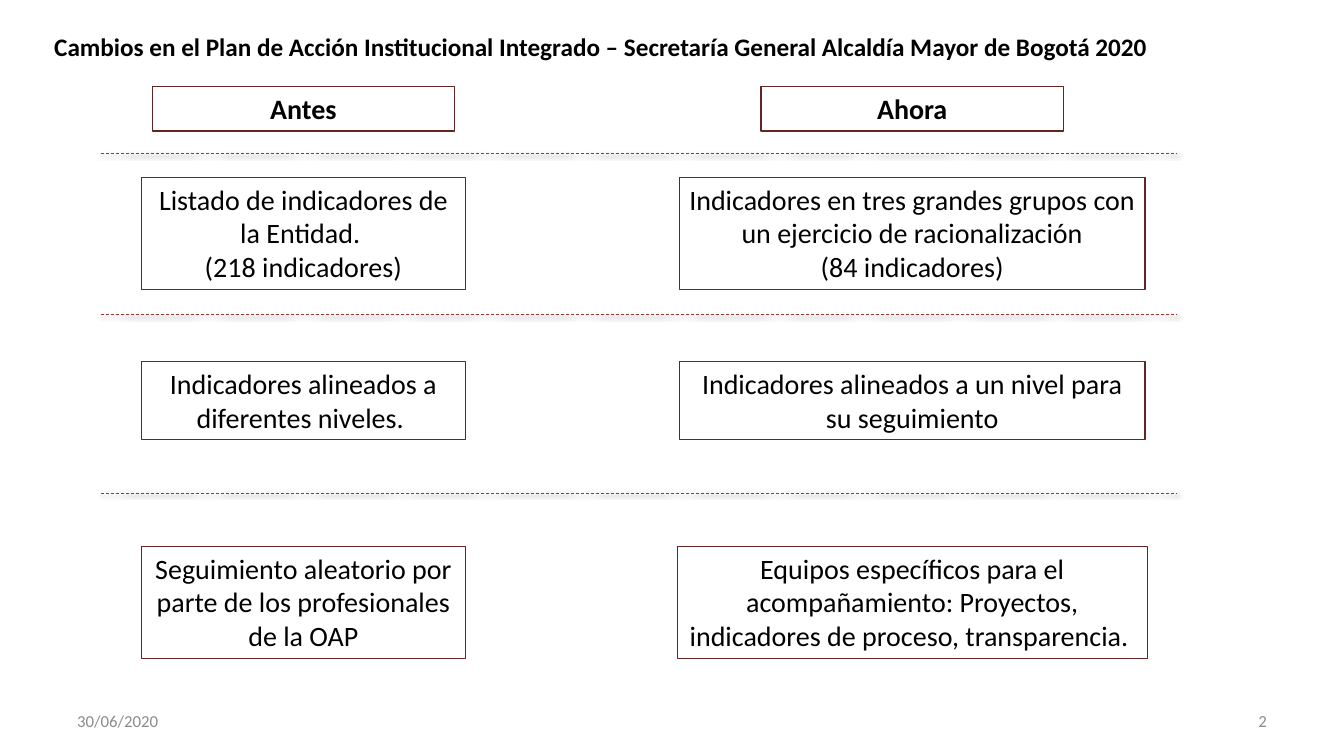
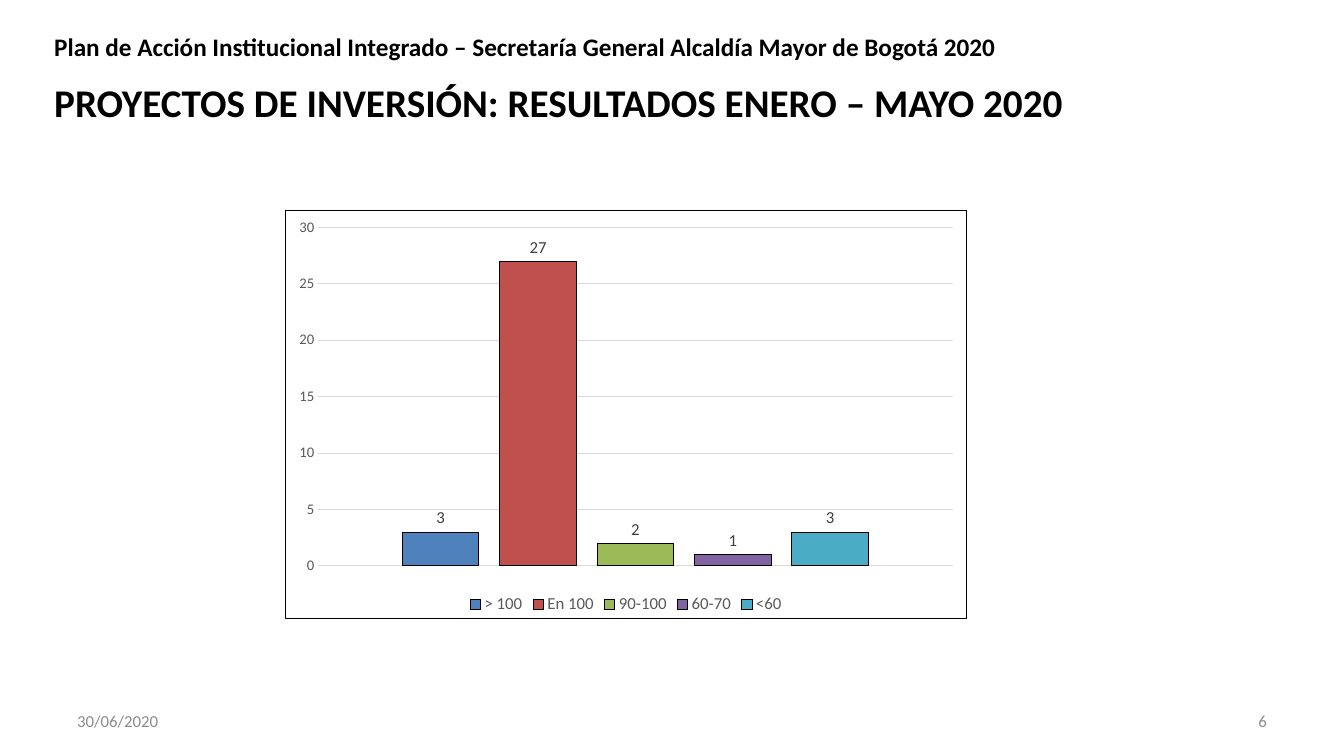
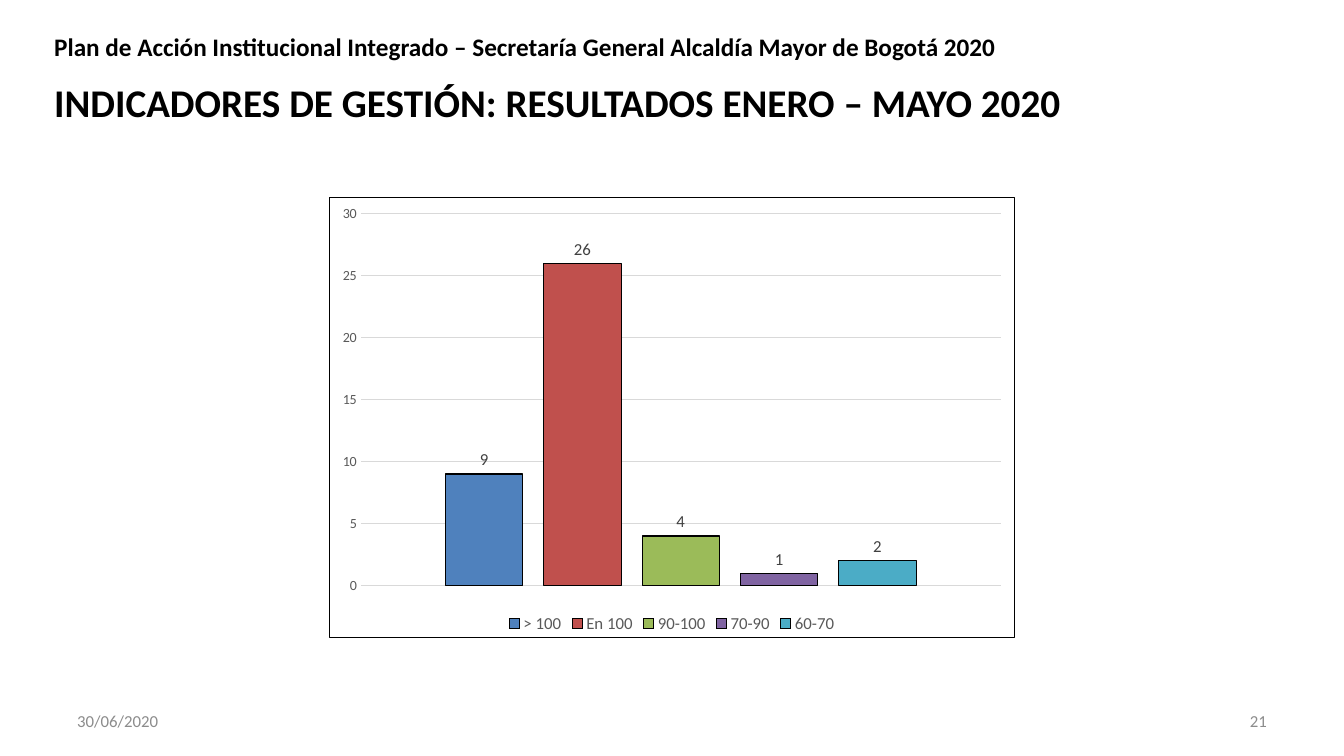
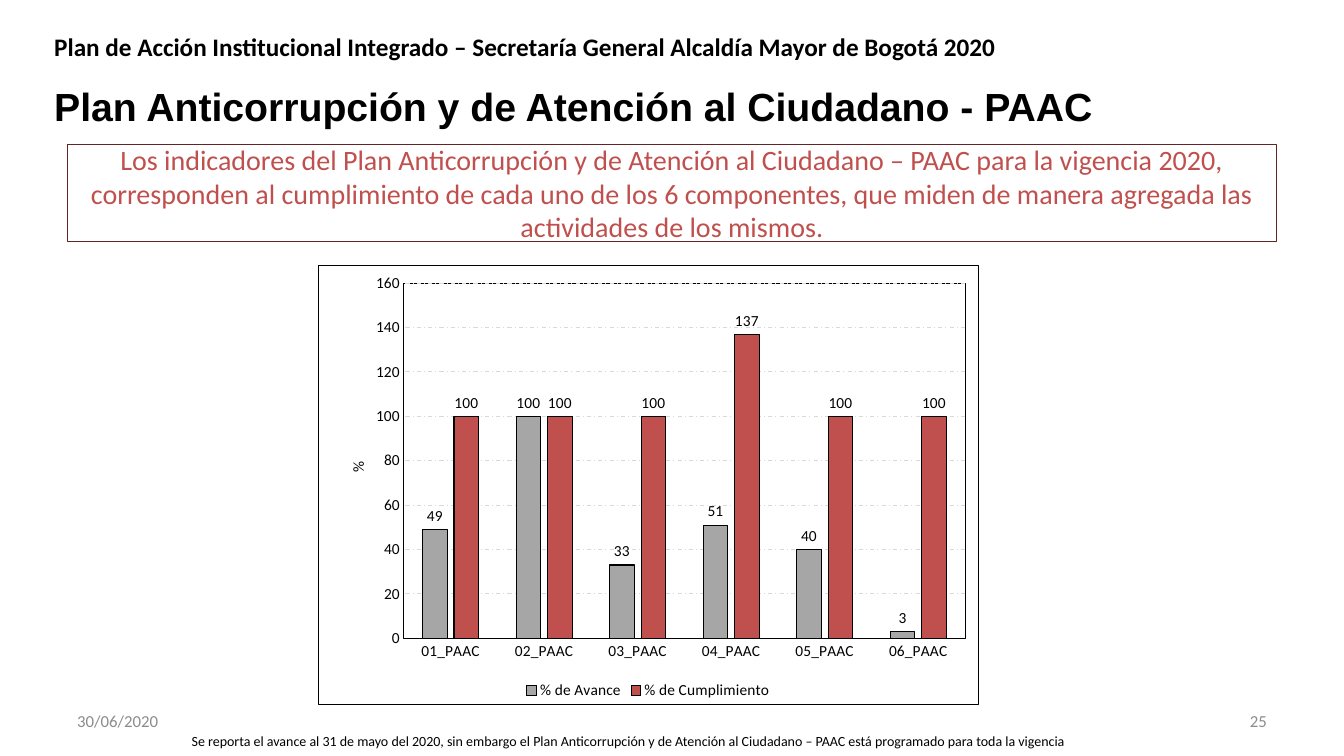
from dataclasses import dataclass

from lxml import etree
from pptx import Presentation
from pptx.chart.data import CategoryChartData
from pptx.dml.color import RGBColor
from pptx.enum.chart import XL_CHART_TYPE, XL_LABEL_POSITION, XL_LEGEND_POSITION, XL_TICK_MARK
from pptx.enum.dml import MSO_LINE
from pptx.enum.shapes import MSO_CONNECTOR, MSO_SHAPE
from pptx.enum.text import MSO_ANCHOR, PP_ALIGN
from pptx.oxml import parse_xml
from pptx.oxml.ns import nsdecls, qn
from pptx.util import Inches, Pt

COLUMNS = XL_CHART_TYPE.COLUMN_CLUSTERED
OUTSIDE_END = XL_LABEL_POSITION.OUTSIDE_END
BOTTOM = XL_LEGEND_POSITION.BOTTOM
NO_TICK = XL_TICK_MARK.NONE
DASH, DASH_DOT = MSO_LINE.DASH, MSO_LINE.DASH_DOT
STRAIGHT, RECTANGLE = MSO_CONNECTOR.STRAIGHT, MSO_SHAPE.RECTANGLE
TOP, MIDDLE = MSO_ANCHOR.TOP, MSO_ANCHOR.MIDDLE
LEFT, CENTER, RIGHT = PP_ALIGN.LEFT, PP_ALIGN.CENTER, PP_ALIGN.RIGHT

FONT, TITLE_FONT = "Calibri", "Arial"
BLACK, GREY, DARK_GREY, LABEL_GREY = "000000", "8C8C8C", "595959", "404040"
GRID_GREY, BAR_GREY = "D9D9D9", "A6A6A6"
RED, FRAME_RED, DIVIDER_RED = "C0504D", "632523", "953735"
RANGE_COLORS = ["4F81BD", RED, "9BBB59", "8064A2", "4BACC6"]
DATE = "30/06/2020"
PLAN = "Plan de Acción Institucional Integrado – Secretaría General Alcaldía Mayor de Bogotá 2020"


@dataclass
class Box:
    left: int
    top: int
    width: int
    height: int

    def share(self, x, y, w, h):
        """Inner box, given in percent of this one."""
        return Box(int(self.left + self.width * x / 100), int(self.top + self.height * y / 100),
                   int(self.width * w / 100), int(self.height * h / 100))

    def bounds(self):
        return self.left, self.top, self.width, self.height


PAGE = Box(0, 0, Inches(13.33), Inches(7.5))


# Shared styles
def rgb(value):
    return RGBColor.from_string(value)


def style_font(font, size, color=BLACK, bold=False, name=FONT):
    font.name, font.size, font.bold = name, Pt(size), bold
    font.color.rgb = rgb(color)


def style_line(line, color, width=0.75, dash=None):
    line.color.rgb = rgb(color)
    line.width = Pt(width)
    if dash:
        line.dash_style = dash


def write(shape, text, size, color=BLACK, bold=False, align=LEFT, anchor=TOP, name=FONT):
    frame = shape.text_frame
    frame.word_wrap = True
    frame.vertical_anchor = anchor
    frame.text = text
    for paragraph in frame.paragraphs:
        paragraph.alignment = align
        for run in paragraph.runs:
            style_font(run.font, size, color, bold, name)


def add_text(slide, box, text, size, **style):
    label = slide.shapes.add_textbox(*box.bounds())
    write(label, text, size, **style)
    return label


def add_frame(slide, box, text, **style):
    frame = slide.shapes.add_shape(RECTANGLE, *box.bounds())
    frame.shadow.inherit = False
    frame.fill.background()
    style_line(frame.line, FRAME_RED)
    write(frame, text, 20, align=CENTER, **style)


def new_slide(deck, number, heading):
    slide = deck.slides.add_slide(deck.slide_layouts[6])
    add_text(slide, PAGE.share(3.3, 3.45, 86.55, 5.33), heading, 18, bold=True)
    for x, text, align in ((5, DATE, LEFT), (71.67, str(number), RIGHT)):
        add_text(slide, PAGE.share(x, 92.67, 23.33, 5.33), text, 12,
                 color=GREY, align=align, anchor=MIDDLE)
    return slide


def add_title(slide, text, name=FONT):
    title = add_text(slide, PAGE.share(3.3, 9.75, 90, 7.6), text, 28, bold=True, name=name)
    return title.text_frame.paragraphs[0]


# Comparison
def add_divider(slide, y):
    row = PAGE.share(7.5, y, 80.1, 0)
    divider = slide.shapes.add_connector(STRAIGHT, row.left, row.top,
                                         row.left + row.width, row.top)
    style_line(divider.line, DIVIDER_RED, 0.5, DASH)
    divider.element.spPr.append(parse_xml(
        f'<a:effectLst {nsdecls("a")}><a:outerShdw blurRad="40000" dist="20000" dir="5400000" '
        'rotWithShape="0"><a:srgbClr val="000000"><a:alpha val="38000"/></a:srgbClr>'
        '</a:outerShdw></a:effectLst>'))


def add_column(slide, box, heading, heading_width, statements):
    """Heading over evenly stepped statements, all centred in the box."""
    def centred(y, w, h):
        return box.share((100 - w) / 2, y, w, h)

    add_frame(slide, centred(0, heading_width, 7.76), heading, bold=True)
    for i, (text, width, height) in enumerate(statements):
        add_frame(slide, centred(15.87 + 32.28 * i, width, height), text)


def comparison_slide(deck):
    slide = new_slide(deck, 2, "Cambios en el Plan de Acción Institucional Integrado – "
                               "Secretaría General Alcaldía Mayor de Bogotá 2020")
    two_lines, three_lines = 13.58, 19.58
    add_column(slide, PAGE.share(10.5, 11.47, 24.15, 75.6), "Antes", 93.17, [
        ("Listado de indicadores de la Entidad. \n(218 indicadores)", 100, three_lines),
        ("Indicadores alineados a diferentes niveles. ", 100, two_lines),
        ("Seguimiento aleatorio por parte de los profesionales de la OAP", 100, three_lines)])
    add_column(slide, PAGE.share(50.4, 11.47, 34.95, 75.6), "Ahora", 64.38, [
        ("Indicadores en tres grandes grupos con un ejercicio de racionalización\n"
         "(84 indicadores)", 99.14, three_lines),
        ("Indicadores alineados a un nivel para su seguimiento", 99.14, two_lines),
        ("Equipos específicos para el acompañamiento: Proyectos, "
         "indicadores de proceso, transparencia. ", 100, three_lines)])
    for y in (20.27, 41.6, 65.2):
        add_divider(slide, y)


# Charts
def outline_xml():
    return parse_xml(
        f'<c:spPr {nsdecls("c", "a")}><a:noFill/><a:ln w="9525"><a:solidFill>'
        f'<a:srgbClr val="{BLACK}"/></a:solidFill></a:ln></c:spPr>')


def set_layout(parent, index, target=None, **places):
    """Fixes the place of a chart part, in shares of the chart."""
    for old in parent.findall(qn("c:layout")):
        parent.remove(old)
    layout = etree.Element(qn("c:layout"))
    manual = etree.SubElement(layout, qn("c:manualLayout"))
    settings = {"layoutTarget": target} if target else {}
    settings.update(xMode="edge", yMode="edge", **places)
    for tag, value in settings.items():
        etree.SubElement(manual, qn("c:" + tag)).set("val", str(value))
    parent.insert(index, layout)


def add_bars(slide, box, categories, series, colors, top, step, gap, sizes, text_colors,
             grid_dash=None):
    """sizes and text_colors: value axis, then legend, then data labels."""
    data = CategoryChartData()
    data.categories = categories
    for name, values in series:
        data.add_series(name, values)
    chart = slide.shapes.add_chart(COLUMNS, *box.bounds(), data).chart
    style_font(chart.font, 10)
    chart.element.find(qn("c:chart")).addnext(outline_xml())
    chart.has_title = False
    chart.has_legend = True
    chart.legend.position = BOTTOM
    chart.legend.include_in_layout = False
    style_font(chart.legend.font, sizes[1], text_colors[1])

    axis = chart.value_axis
    axis.minimum_scale, axis.maximum_scale, axis.major_unit = 0, top, step
    axis.major_tick_mark = axis.minor_tick_mark = NO_TICK
    axis.format.line.fill.background()
    style_line(axis.major_gridlines.format.line, GRID_GREY, dash=grid_dash)
    style_font(axis.tick_labels.font, sizes[0], text_colors[0])

    plot = chart.plots[0]
    plot.gap_width, plot.overlap, plot.vary_by_categories = gap, -27, False
    for bars, color in zip(plot.series, colors):
        bars.format.fill.solid()
        bars.format.fill.fore_color.rgb = rgb(color)
        style_line(bars.format.line, BLACK)
        labels = bars.data_labels
        labels.show_value = True
        labels.position = OUTSIDE_END
        labels.number_format, labels.number_format_is_linked = "#,##0", False
        style_font(labels.font, sizes[2], text_colors[2])
    return chart


def results_slide(deck, number, title, box, counts, axis_size):
    slide = new_slide(deck, number, PLAN)
    add_title(slide, title)
    chart = add_bars(slide, box, ["1"], [(name, [count]) for name, count in counts.items()],
                     RANGE_COLORS, 30, 5, 219, (axis_size, 12, 12),
                     (DARK_GREY, DARK_GREY, LABEL_GREY))
    chart.category_axis.visible = False


def anticorruption_slide(deck):
    slide = new_slide(deck, 25, PLAN)
    title = add_title(slide, "Plan Anticorrupción y de Atención al Ciudadano - PAAC", TITLE_FONT)
    title.line_spacing = 1.07
    add_text(slide, PAGE.share(12, 96.27, 69.68, 3.6),
             "Se reporta el avance al 31 de mayo del 2020, sin embargo el Plan Anticorrupción y de "
             "Atención al Ciudadano – PAAC está programado para toda la vigencia ",
             10, align=CENTER)
    chart = add_bars(slide, PAGE.share(23.63, 35.07, 49.2, 58.13),
                     [f"{i:02}_PAAC" for i in range(1, 7)],
                     [("% de Avance", [49, 100, 33, 51, 40, 3]),
                      ("% de Cumplimiento", [100, 100, 100, 137, 100, 100])],
                     [BAR_GREY, RED], 160, 20, 150, (11, 11, 11), (BLACK,) * 3, DASH_DOT)
    components = chart.category_axis
    components.major_tick_mark = NO_TICK
    style_line(components.format.line, BLACK)
    style_font(components.tick_labels.font, 11)

    # Upright percent sign beside the outlined plot
    percent = chart.value_axis.axis_title
    percent.text_frame.text = "%"
    style_font(percent.text_frame.paragraphs[0].runs[0].font, 11)
    percent.element.find(".//" + qn("a:bodyPr")).set("rot", "-5400000")
    set_layout(percent.element, 1, x=0.04, y=0.44)
    plot_area = chart.element.find(".//" + qn("c:plotArea"))
    set_layout(plot_area, 0, "inner", x=0.13, y=0.04, w=0.85, h=0.81)
    plot_area.append(outline_xml())

    add_frame(slide, PAGE.share(5, 19.07, 90, 12.93),
              "Los indicadores del Plan Anticorrupción y de Atención al Ciudadano – PAAC para la "
              "vigencia 2020, corresponden al cumplimiento de cada uno de los 6 componentes, que "
              "miden de manera agregada las actividades de los mismos.", color=RED, anchor=MIDDLE)


def main():
    deck = Presentation()
    deck.slide_width, deck.slide_height = PAGE.width, PAGE.height
    comparison_slide(deck)
    results_slide(deck, 6, "PROYECTOS DE INVERSIÓN: RESULTADOS ENERO – MAYO 2020",
                  PAGE.share(21.23, 27.75, 50.7, 54.1),
                  {"> 100": 3, "En 100": 27, "90-100": 2, "60-70": 1, "<60": 3}, 10.5)
    results_slide(deck, 21, "INDICADORES DE GESTIÓN: RESULTADOS ENERO – MAYO 2020",
                  PAGE.share(24.45, 26, 51.08, 58.4),
                  {"> 100": 9, "En 100": 26, "90-100": 4, "70-90": 1, "60-70": 2}, 10)
    anticorruption_slide(deck)
    deck.save("out.pptx")


if __name__ == "__main__":
    main()
